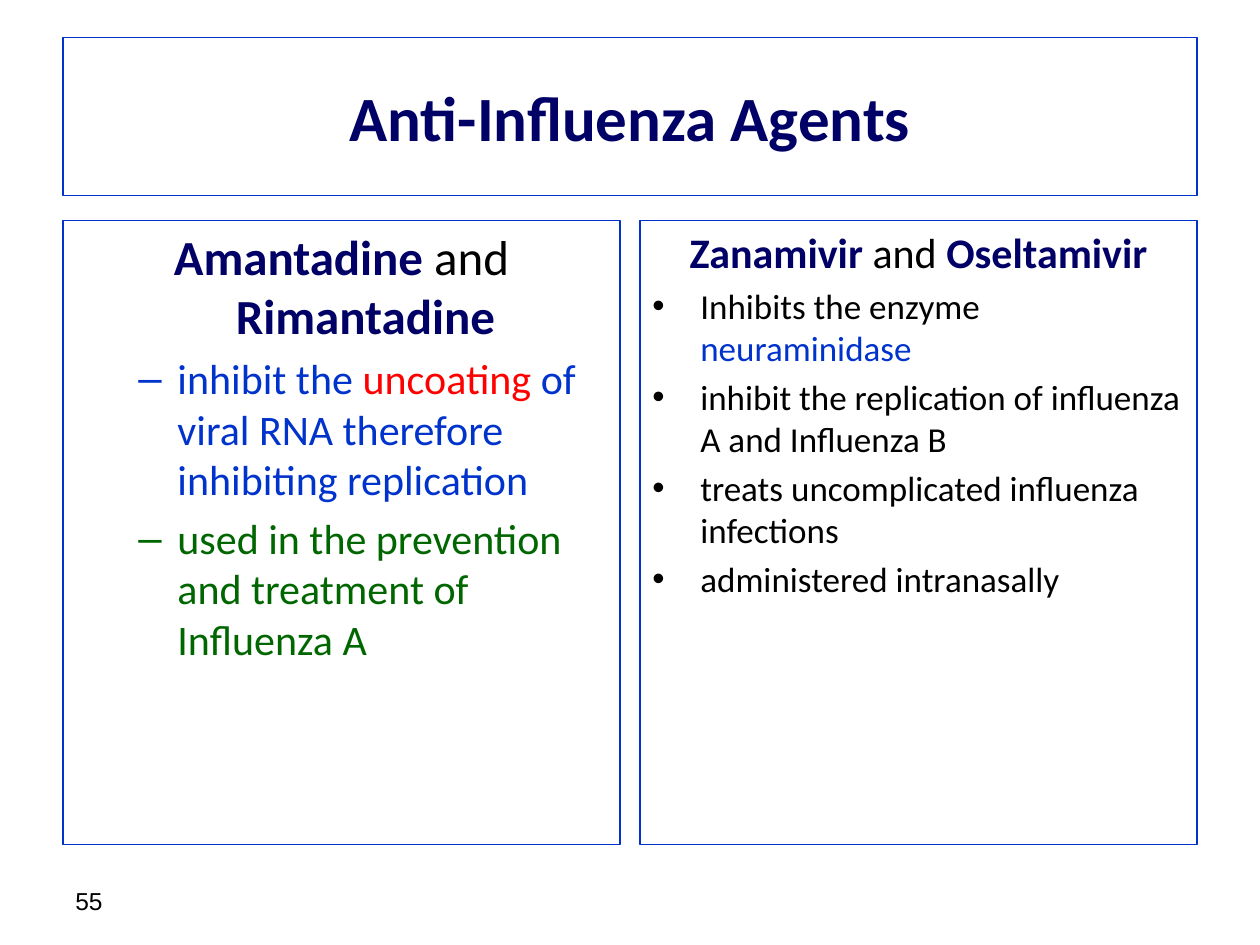
from lxml.etree import SubElement
from pptx import Presentation
from pptx.dml.color import RGBColor
from pptx.enum.text import MSO_ANCHOR as Anchor, PP_ALIGN as Align
from pptx.oxml.ns import qn
from pptx.util import Inches, Pt

THEME = {
    "navy": "000066", "blue": "0033CC", "red": "FF0000",
    "green": "006600", "black": "000000",
    "body_font": "Calibri", "number_font": "Arial",
    "title": 36, "number": 14, "border": 0.75,
}

TITLE = "Anti-Influenza Agents"
PAGE_NUMBER = "55"

# Each paragraph is a list of (text, colour) spans; navy heading words are bold.
PANELS = [
    {
        "heading": [("Amantadine", "navy"), (" and ", "black"), ("Rimantadine", "navy")],
        "heading_size": 28,
        "points": [
            [("inhibit the ", "blue"), ("uncoating ", "red"),
             ("of viral RNA therefore inhibiting replication", "blue")],
            [("used in the prevention and treatment of Influenza A", "green")],
        ],
        "point_format": {"size": 24, "bullet": "–", "level": 1, "indent": (0.81, -0.31)},
    },
    {
        "heading": [("Zanamivir ", "navy"), ("and ", "black"), ("Oseltamivir", "navy")],
        "heading_size": 24,
        "points": [
            [("Inhibits the enzyme ", "black"), ("neuraminidase", "blue")],
            [("inhibit the replication of influenza A and Influenza B", "black")],
            [("treats uncomplicated influenza infections", "black")],
            [("administered intranasally", "black")],
        ],
        "point_format": {"size": 20, "bullet": "•", "indent": (0.38, -0.38)},
    },
]

MARGIN, CONTENT_WIDTH, GAP = 0.5, 9, 0.16
PANEL_TOP, PANEL_HEIGHT = 1.75, 4.95
PANEL_WIDTH = (CONTENT_WIDTH - GAP) / 2


def colour(name):
    return RGBColor.from_string(THEME[name])


def write(para, spans, size, font="body_font", align=Align.LEFT,
          level=0, indent=None, bullet=None, space_ratio=0):
    """Fill a paragraph; indent is (left margin, first line) in inches."""
    para.alignment = align
    para.level = level
    para.space_before = Pt(size * space_ratio)
    properties = para._p.get_or_add_pPr()
    if indent:
        for key, value in zip(("marL", "indent"), indent):
            properties.set(key, str(Inches(value)))
    if bullet:
        SubElement(properties, qn("a:buFont")).set("typeface", THEME["number_font"])
        SubElement(properties, qn("a:buChar")).set("char", bullet)
    for text, name in spans:
        span = para.add_run()
        span.text = text
        span.font.name = THEME[font]
        span.font.size = Pt(size)
        span.font.bold = name == "navy"
        span.font.color.rgb = colour(name)


def place(shape, left, top, width, height):
    shape.left, shape.top = Inches(left), Inches(top)
    shape.width, shape.height = Inches(width), Inches(height)


def outline(shape):
    shape.line.color.rgb = colour("blue")
    shape.line.width = Pt(THEME["border"])


def add_box(page, left, top, width, height):
    box = page.shapes.add_textbox(*map(Inches, (left, top, width, height)))
    box.text_frame.word_wrap = True
    return box


def add_panel(page, panel, left):
    box = add_box(page, left, PANEL_TOP, PANEL_WIDTH, PANEL_HEIGHT)
    outline(box)
    frame = box.text_frame
    write(frame.paragraphs[0], panel["heading"], panel["heading_size"],
          align=Align.CENTER, indent=(0.38, -0.38), space_ratio=0.2)
    for spans in panel["points"]:
        write(frame.add_paragraph(), spans, space_ratio=0.2, **panel["point_format"])


def main():
    deck = Presentation()
    deck.slide_width, deck.slide_height = Inches(10), Inches(7.5)
    page = deck.slides.add_slide(deck.slide_layouts[5])

    title = page.shapes.title
    place(title, MARGIN, 0.3, CONTENT_WIDTH, 1.25)
    outline(title)
    title.text_frame.vertical_anchor = Anchor.MIDDLE
    write(title.text_frame.paragraphs[0], [(TITLE, "navy")], THEME["title"],
          align=Align.CENTER)

    for column, panel in enumerate(PANELS):
        add_panel(page, panel, MARGIN + column * (PANEL_WIDTH + GAP))

    number = add_box(page, MARGIN, 6.95, 2.33, 0.4)
    number.text_frame.vertical_anchor = Anchor.MIDDLE
    write(number.text_frame.paragraphs[0], [(PAGE_NUMBER, "black")],
          THEME["number"], font="number_font")

    deck.save("out.pptx")


if __name__ == "__main__":
    main()
